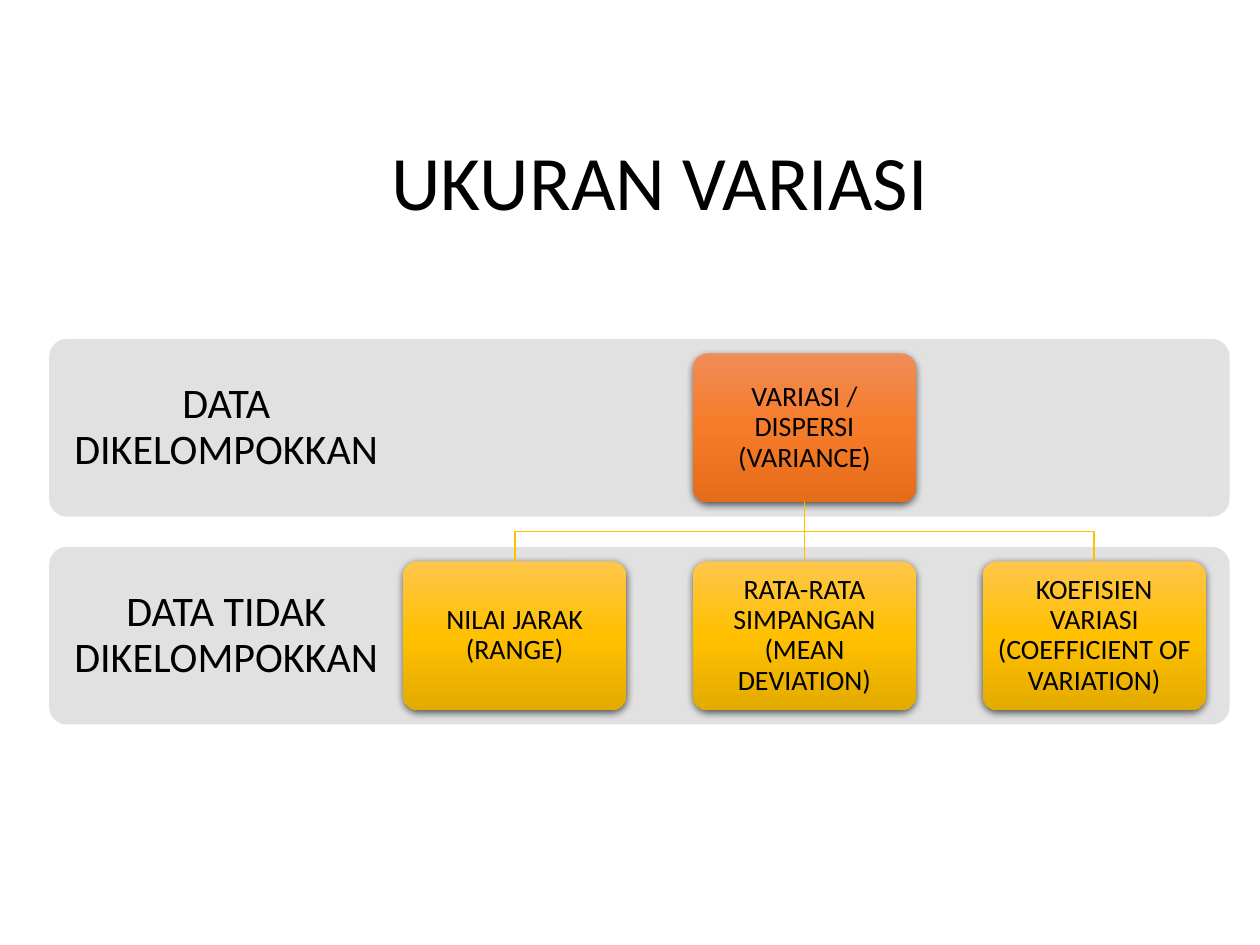
from copy import deepcopy

from lxml.etree import SubElement
from pptx import Presentation
from pptx.dml.color import RGBColor
from pptx.enum.shapes import MSO_CONNECTOR, MSO_SHAPE
from pptx.enum.text import MSO_ANCHOR, PP_ALIGN
from pptx.oxml.ns import qn
from pptx.util import Inches, Pt

COLORS = {
    "text": "000000",
    "band": "E1E1E1",
    "branch": "FFC000",
    "shadow": "000000",
    "root": ("F18C57", "F67B28", "E56C19"),
    "leaf": ("FFC64B", "FFC000", "E3AB00"),
}

# Grid: two bands as rows, three card columns
BAND_LEFT, BAND_WIDTH, BAND_HEIGHT = 0.39, 9.37, 1.41
LABEL_WIDTH = 2.81
ROW_TOP, ROW_STEP = 2.69, 1.65
CARD_LEFT, CARD_STEP = 3.2, 2.3
CARD_WIDTH, CARD_HEIGHT = 1.77, 1.18
CARD_INDENT = (BAND_HEIGHT - CARD_HEIGHT) / 2

BANDS = ["DATA DIKELOMPOKKAN", "DATA TIDAK DIKELOMPOKKAN"]
ROOT = "VARIASI / DISPERSI (VARIANCE)"
LEAVES = [
    "NILAI JARAK (RANGE)",
    "RATA-RATA SIMPANGAN (MEAN DEVIATION)",
    "KOEFISIEN VARIASI (COEFFICIENT OF VARIATION)",
]


def rgb(name):
    return RGBColor.from_string(COLORS[name])


def write(holder, words, size, inset, align=PP_ALIGN.CENTER):
    frame = holder.text_frame
    frame_format = {"word_wrap": True, "vertical_anchor": MSO_ANCHOR.MIDDLE}
    for side in ("left", "top", "right", "bottom"):
        frame_format[f"margin_{side}"] = Inches(inset)
    for name, value in frame_format.items():
        setattr(frame, name, value)
    paragraph = frame.paragraphs[0]
    paragraph.text = words
    for name, value in {"alignment": align, "line_spacing": 0.9}.items():
        setattr(paragraph, name, value)
    for name, value in {"name": "Calibri", "size": Pt(size)}.items():
        setattr(paragraph.font, name, value)
    paragraph.font.color.rgb = rgb("text")


def add_text(slide, box, words, size, inset, align=PP_ALIGN.CENTER):
    write(slide.shapes.add_textbox(*map(Inches, box)), words, size, inset, align)


def add_rounded(slide, box):
    panel = slide.shapes.add_shape(MSO_SHAPE.ROUNDED_RECTANGLE, *map(Inches, box))
    panel.adjustments[0] = 0.1
    panel.line.fill.background()
    panel.shadow.inherit = False
    return panel


def add_band(slide, row, label):
    top = ROW_TOP + row * ROW_STEP
    band = add_rounded(slide, (BAND_LEFT, top, BAND_WIDTH, BAND_HEIGHT))
    band.fill.solid()
    band.fill.fore_color.rgb = rgb("band")
    add_text(slide, (BAND_LEFT, top, LABEL_WIDTH, BAND_HEIGHT), label, 24, 0.19)


def fill_gradient(card, tones):
    card.fill.gradient()
    card.fill.gradient_angle = 270
    stop_list = card._element.spPr.find(qn("a:gradFill")).find(qn("a:gsLst"))
    stop_list.append(deepcopy(stop_list[0]))
    for stop, tone, position in zip(card.fill.gradient_stops, tones, (0, 0.5, 1)):
        stop.color.rgb = RGBColor.from_string(tone)
        stop.position = position


def add_shadow(card):
    effects = card._element.spPr.find(qn("a:effectLst"))
    shadow = SubElement(effects, qn("a:outerShdw"), blurRad=str(Pt(4.5)),
                        dist=str(Pt(1.5)), dir="5400000", algn="ctr", rotWithShape="0")
    color = SubElement(shadow, qn("a:srgbClr"), val=COLORS["shadow"])
    SubElement(color, qn("a:alpha"), val="63000")


def add_card(slide, column, row, words, tones):
    card = add_rounded(slide, (CARD_LEFT + column * CARD_STEP,
                               ROW_TOP + row * ROW_STEP + CARD_INDENT,
                               CARD_WIDTH, CARD_HEIGHT))
    fill_gradient(card, COLORS[tones])
    add_shadow(card)
    write(card, words, 16, 0.07)
    return card


def style_branch(branch):
    branch.line.color.rgb = rgb("branch")
    branch.line.width = Pt(1)


def add_straight_branch(slide, root, leaf):
    branch = slide.shapes.add_connector(MSO_CONNECTOR.STRAIGHT, 0, 0, 0, 0)
    branch.begin_connect(root, 2)
    branch.end_connect(leaf, 0)
    style_branch(branch)
    SubElement(branch._element.spPr, qn("a:effectLst"))


def add_bent_branch(slide, root, leaf):
    start_x, end_x = (card.left + card.width // 2 for card in (root, leaf))
    start_y = root.top + root.height
    middle_y = (start_y + leaf.top) // 2
    builder = slide.shapes.build_freeform(start_x, start_y)
    builder.add_line_segments(
        [(start_x, middle_y), (end_x, middle_y), (end_x, leaf.top)], close=False)
    branch = builder.convert_to_shape()
    branch.fill.background()
    branch.shadow.inherit = False
    style_branch(branch)


def main():
    deck = Presentation()
    deck.slide_width, deck.slide_height = Inches(10), Inches(7.5)
    slide = deck.slides.add_slide(deck.slide_layouts[6])

    # Title
    add_text(slide, (3.01, 0.94, 5.23, 1.06), "UKURAN VARIASI", 44, 0.1, PP_ALIGN.LEFT)

    # Bands with their labels
    for row, label in enumerate(BANDS):
        add_band(slide, row, label)

    # Cards
    root = add_card(slide, 1, 0, ROOT, "root")
    leaves = [add_card(slide, column, 1, words, "leaf")
              for column, words in enumerate(LEAVES)]

    # Branches from the root to each leaf
    for leaf in leaves:
        add_branch = add_straight_branch if leaf.left == root.left else add_bent_branch
        add_branch(slide, root, leaf)

    deck.save("out.pptx")


if __name__ == "__main__":
    main()
